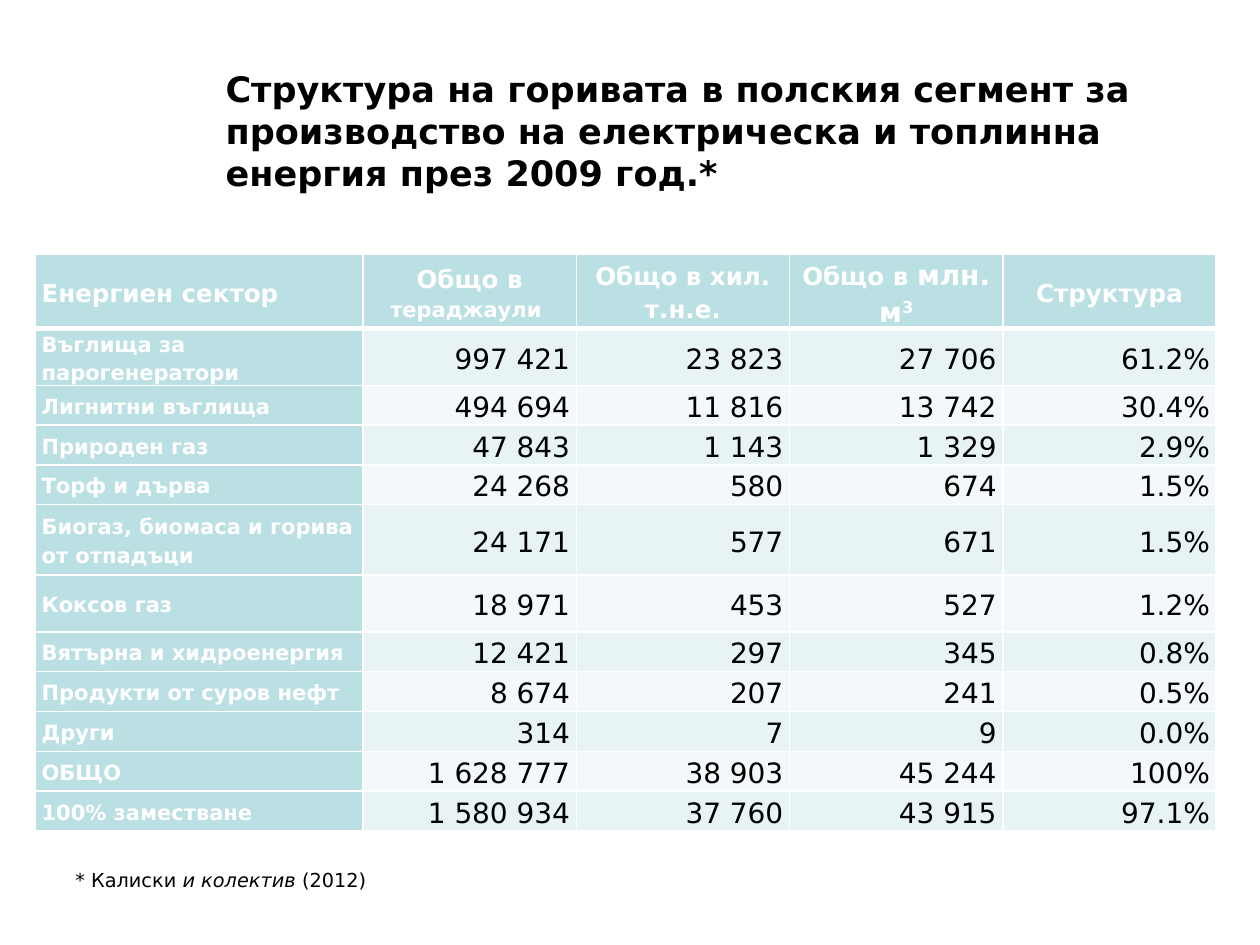
from lxml import etree
from pptx import Presentation
from pptx.dml.color import RGBColor
from pptx.enum.text import MSO_ANCHOR, MSO_AUTO_SIZE, PP_ALIGN
from pptx.oxml.ns import qn
from pptx.util import Pt

MIDDLE = MSO_ANCHOR.MIDDLE
LEFT, CENTER, RIGHT = PP_ALIGN.LEFT, PP_ALIGN.CENTER, PP_ALIGN.RIGHT
NO_FIT, GROW = MSO_AUTO_SIZE.NONE, MSO_AUTO_SIZE.SHAPE_TO_FIT_TEXT
TITLE_ONLY = 5

FONT = "DejaVu Sans"
BLACK = RGBColor(0x00, 0x00, 0x00)
WHITE = RGBColor(0xFF, 0xFF, 0xFF)
TEAL = RGBColor(0xBB, 0xE0, 0xE3)
BANDS = (RGBColor(0xE7, 0xF3, 0xF4), RGBColor(0xF3, 0xF9, 0xFA))

TITLE = ("Структура на горивата в полския сегмент за производство "
         "на електрическа и топлинна енергия през 2009 год.*")
# Each heading is a list of (text, size) spans.
HEADINGS = [
    [("Енергиен сектор", 14)],
    [("Общо в ", 14), ("тераджаули ", 12)],
    [("Общо в хил. т.н.е.", 14)],
    [("Общо в ", 14), ("млн. м", 16), ("3", 16)],
    [("Структура", 14)],
]
FUELS = [
    ("Въглища за парогенератори", "997 421", "23 823", "27 706", "61.2%"),
    ("Лигнитни въглища", "494 694", "11 816", "13 742", "30.4%"),
    ("Природен газ", "47 843", "1 143", "1 329", "2.9%"),
    ("Торф и дърва", "24 268", "580", "674", "1.5%"),
    ("Биогаз, биомаса и горива от отпадъци", "24 171", "577", "671", "1.5%"),
    ("Коксов газ", "18 971", "453", "527", "1.2%"),
    ("Вятърна и хидроенергия", "12 421", "297", "345", "0.8%"),
    ("Продукти от суров нефт", "8 674", "207", "241", "0.5%"),
    ("Други", "314", "7", "9", "0.0%"),
    ("ОБЩО", "1 628 777", "38 903", "45 244", "100%"),
    ("100% заместване", "1 580 934", "37 760", "43 915", "97.1%"),
]
COLUMN_WIDTHS = [187.2] + [121.9] * 4
ROW_HEIGHT = 22.75
TALL_ROWS = {0: 42.3, 1: 32, 5: 40.3, 6: 32.4}


def add_span(para, text, size, color, bold=False, italic=False):
    span = para.add_run()
    span.text = text
    font = span.font
    font.name, font.size = FONT, Pt(size)
    font.bold, font.italic = bold, italic
    font.color.rgb = color
    return span


def add_title(page):
    title = page.shapes.title
    title.left, title.top, title.width, title.height = (
        Pt(121.7), Pt(37.4), Pt(598.3), Pt(74.2))
    frame = title.text_frame
    frame.word_wrap = True
    frame.auto_size = NO_FIT
    frame.vertical_anchor = MIDDLE
    para = frame.paragraphs[0]
    para.alignment = LEFT
    add_span(para, TITLE, 20, BLACK, bold=True)


def add_border(cell, side, width):
    """Draw a white border on one side (L, R, T or B) of the cell."""
    properties = cell._tc.get_or_add_tcPr()
    line = etree.SubElement(properties, qn(f"a:ln{side}"), w=str(Pt(width)))
    fill = etree.SubElement(line, qn("a:solidFill"))
    etree.SubElement(fill, qn("a:srgbClr"), val=str(WHITE))


def format_cell(cell, fill, alignment, top, bottom):
    """Style the cell and return its paragraph; top and bottom are border widths."""
    for side, width in (("L", 1), ("R", 1), ("T", top), ("B", bottom)):
        add_border(cell, side, width)
    cell.fill.solid()
    cell.fill.fore_color.rgb = fill
    cell.margin_left = cell.margin_right = Pt(3.6)
    cell.margin_top = cell.margin_bottom = 0
    cell.vertical_anchor = MIDDLE
    para = cell.text_frame.paragraphs[0]
    para.alignment = alignment
    para.line_spacing = 1.15
    return para


def fill_headings(table):
    for column, spans in enumerate(HEADINGS):
        para = format_cell(table.cell(0, column), TEAL,
                           CENTER if column else LEFT, 1, 3)
        for text, size in spans:
            span = add_span(para, text, size, WHITE, bold=True)
            if text == "3":
                span._r.get_or_add_rPr().set("baseline", "30000")


def fill_fuels(table):
    for row, values in enumerate(FUELS, start=1):
        top = 3 if row == 1 else 1
        for column, value in enumerate(values):
            cell = table.cell(row, column)
            if column == 0:
                para = format_cell(cell, TEAL, LEFT, top, 1)
                add_span(para, value, 12, WHITE, bold=True)
            else:
                para = format_cell(cell, BANDS[(row - 1) % 2], RIGHT, top, 1)
                add_span(para, value, 16, BLACK)


def add_fuel_table(page):
    heights = [TALL_ROWS.get(row, ROW_HEIGHT) for row in range(len(FUELS) + 1)]
    table = page.shapes.add_table(
        len(heights), len(COLUMN_WIDTHS), Pt(20.2), Pt(145.4),
        Pt(sum(COLUMN_WIDTHS)), Pt(sum(heights))).table
    table.first_row = table.horz_banding = False
    for column, width in zip(table.columns, COLUMN_WIDTHS):
        column.width = Pt(width)
    for row, height in zip(table.rows, heights):
        row.height = Pt(height)
    fill_headings(table)
    fill_fuels(table)


def add_footnote(page):
    box = page.shapes.add_textbox(Pt(36), Pt(492.5), Pt(182.9), Pt(20.9))
    frame = box.text_frame
    frame.word_wrap = False
    frame.auto_size = GROW
    para = frame.paragraphs[0]
    add_span(para, "* Калиски ", 11, BLACK)
    add_span(para, "и колектив ", 11, BLACK, italic=True)
    add_span(para, "(2012)", 11, BLACK)


def main():
    deck = Presentation()
    deck.slide_width, deck.slide_height = Pt(720), Pt(540)
    page = deck.slides.add_slide(deck.slide_layouts[TITLE_ONLY])
    add_title(page)
    add_fuel_table(page)
    add_footnote(page)
    deck.save("out.pptx")


if __name__ == "__main__":
    main()
